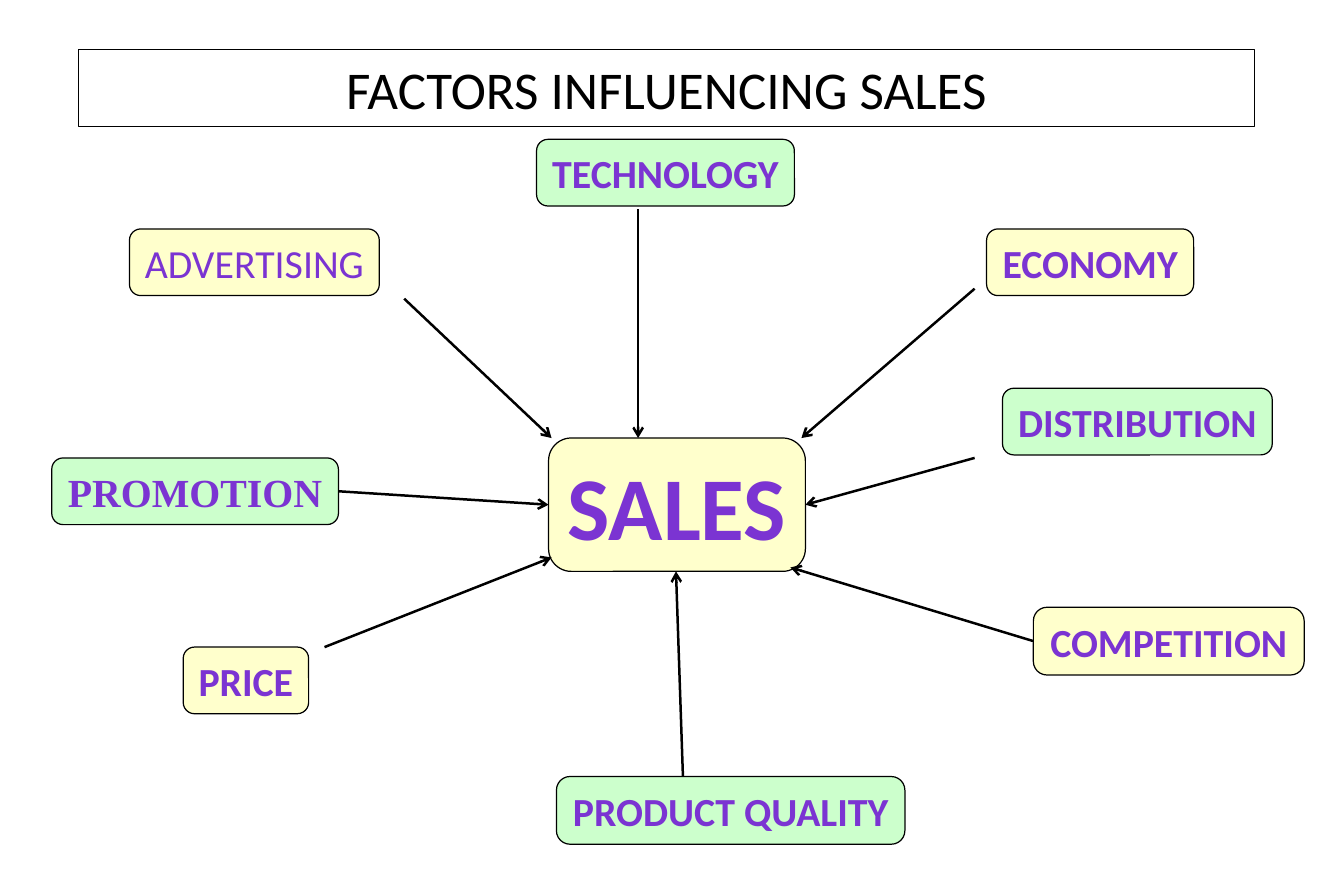
"""Build a slide of the factors that influence sales."""
from pptx import Presentation, util as u
from pptx.dml.color import RGBColor
from pptx.enum import shapes, text
from pptx.oxml.ns import qn
from lxml import etree

BLACK = RGBColor(0x00, 0x00, 0x00)
PURPLE = RGBColor(0x7B, 0x34, 0xD2)
CREAM = RGBColor(0xFF, 0xFF, 0xCC)
MINT = RGBColor(0xCC, 0xFF, 0xCC)

COLUMNS, ROWS = 135, 90
TOP, LEFT, BOTTOM, RIGHT = range(4)
ROUNDNESS = 0.17

HEADING = ("FACTORS INFLUENCING SALES", (7.9, 5, 118.1, 7.7))
HUB = ("SALES", (55.1, 44, 25.8, 13.4))
FACTORS = [
    ("TECHNOLOGY", (53.9, 14, 25.9, 6.7), MINT, {}),
    ("ECONOMY", (99.1, 23, 20.8, 6.7), CREAM, {}),
    ("PRICE", (18.4, 65, 12.6, 6.7), CREAM, {}),
    ("PRODUCT QUALITY", (55.9, 78, 35, 6.8), MINT, {"roundness": 0.2}),
    ("ADVERTISING", (13, 23, 25.1, 6.7), CREAM, {"bold": False}),
    ("DISTRIBUTION", (100.7, 39, 27.1, 6.7), MINT, {}),
    ("PROMOTION", (5.2, 46, 28.8, 6.7), MINT, {"name": "Times New Roman"}),
    ("COMPETITION", (103.8, 61, 27.2, 6.8), CREAM, {"roundness": 0.2}),
]
ARROWS = [
    ("ADVERTISING", (40.6, 30), (55.4, 44)),
    ("TECHNOLOGY", (64.1, 21), (64.1, 44)),
    ("ECONOMY", (97.9, 29), (80.5, 44)),
    ("PRICE", (32.6, 65), (55.4, 56)),
    ("PROMOTION", RIGHT, LEFT),
    ("PRODUCT QUALITY", (68.6, 78), (67.9, 57.4)),
    ("DISTRIBUTION", (97.9, 46), RIGHT),
    ("COMPETITION", LEFT, (79.4, 57)),
]

deck = Presentation()
deck.slide_width, deck.slide_height = u.Inches(11.25), u.Inches(7.5)
slide = deck.slides.add_slide(deck.slide_layouts[5])


def place(*lengths):
    cells = (deck.slide_width / COLUMNS, deck.slide_height / ROWS)
    return [round(length * cells[i % 2]) for i, length in enumerate(lengths)]


def write(box, words, wrap, **font_format):
    box.line.color.rgb = BLACK
    box.line.width = u.Pt(0.75)
    frame = box.text_frame
    frame.text = words
    frame_format = {
        "word_wrap": wrap, "auto_size": text.MSO_AUTO_SIZE.NONE,
        "vertical_anchor": text.MSO_ANCHOR.MIDDLE,
        "margin_left": u.Inches(0.1), "margin_right": u.Inches(0.1),
        "margin_top": u.Inches(0.05), "margin_bottom": u.Inches(0.05),
    }
    for key, value in frame_format.items():
        setattr(frame, key, value)
    paragraph = frame.paragraphs[0]
    paragraph.alignment = text.PP_ALIGN.CENTER
    font = paragraph.runs[0].font
    font.color.rgb = font_format.pop("color")
    for key, value in font_format.items():
        setattr(font, key, value)


def add_factor(words, area, fill, size=24, roundness=ROUNDNESS, bold=True, name="Calibri"):
    box = slide.shapes.add_shape(shapes.MSO_SHAPE.ROUNDED_RECTANGLE, *place(*area))
    box.shadow.inherit = False
    box.adjustments[0] = roundness
    box.fill.solid()
    box.fill.fore_color.rgb = fill
    write(box, words, False, size=u.Pt(size), bold=bold, name=name, color=PURPLE)
    return box


def add_arrow(factor, start, end):
    joins = [site for site in (start, end) if isinstance(site, int)]
    points = [(0, 0) if isinstance(site, int) else site for site in (start, end)]
    arrow = slide.shapes.add_connector(
        shapes.MSO_CONNECTOR.STRAIGHT, *place(*points[0], *points[1]))
    if start in joins:
        arrow.begin_connect(factor, start)
    if end in joins:
        arrow.end_connect(sales, end)
    arrow.line.color.rgb = BLACK
    arrow.line.width = u.Pt(1.5)
    properties = arrow.line._get_or_add_ln()
    etree.SubElement(properties, qn("a:tailEnd"), type="arrow")
    etree.SubElement(properties.getparent(), qn("a:effectLst"))


heading = slide.shapes.title
heading.left, heading.top, heading.width, heading.height = place(*HEADING[1])
write(heading, HEADING[0], True, size=u.Pt(32), name="Calibri", color=BLACK)

sales = add_factor(*HUB, CREAM, size=54)
boxes = {words: add_factor(words, area, fill, **changes)
         for words, area, fill, changes in FACTORS}
for words, start, end in ARROWS:
    add_arrow(boxes[words], start, end)

deck.save("out.pptx")
